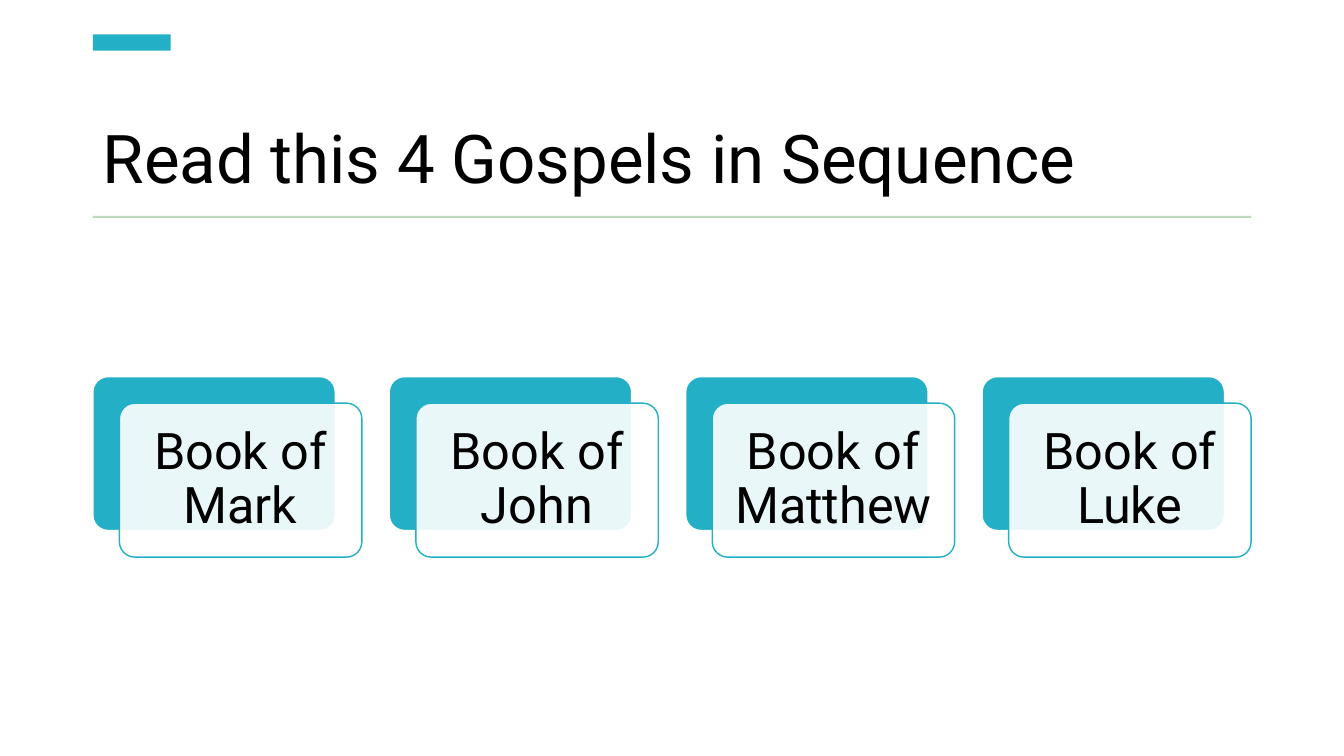
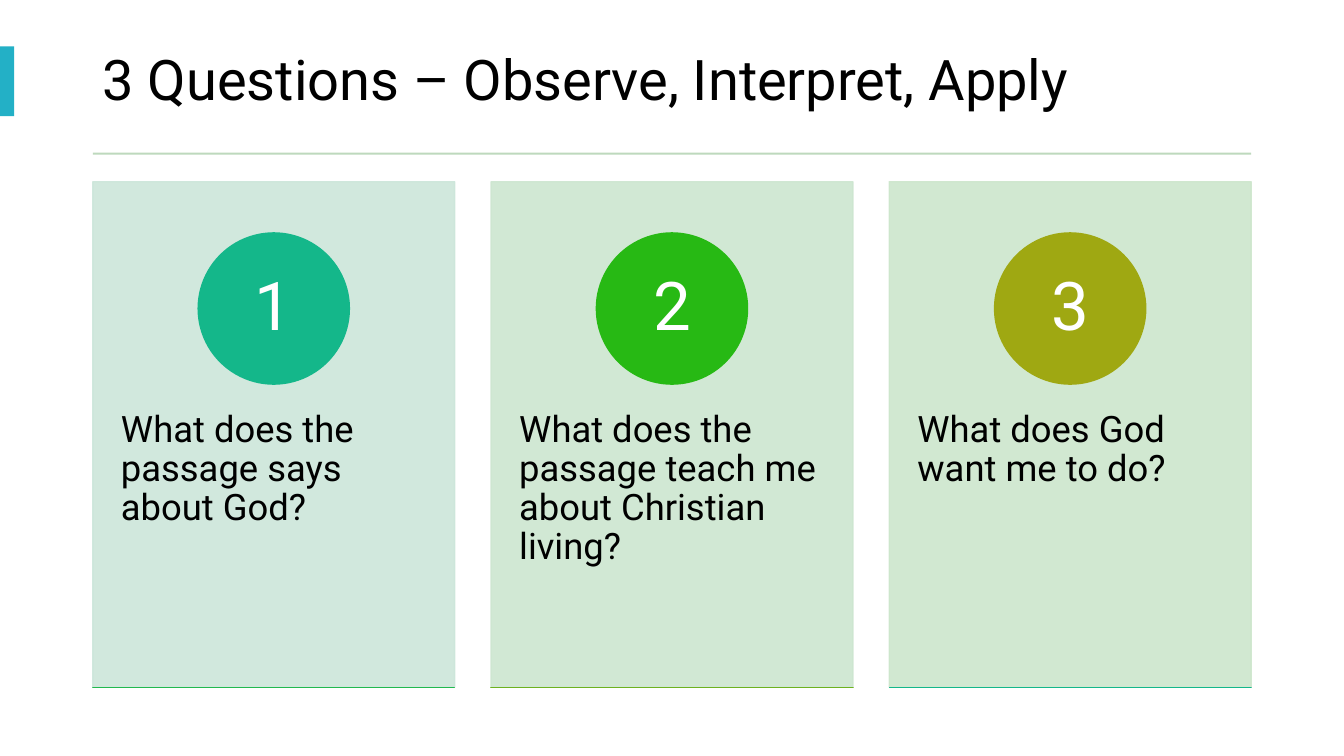
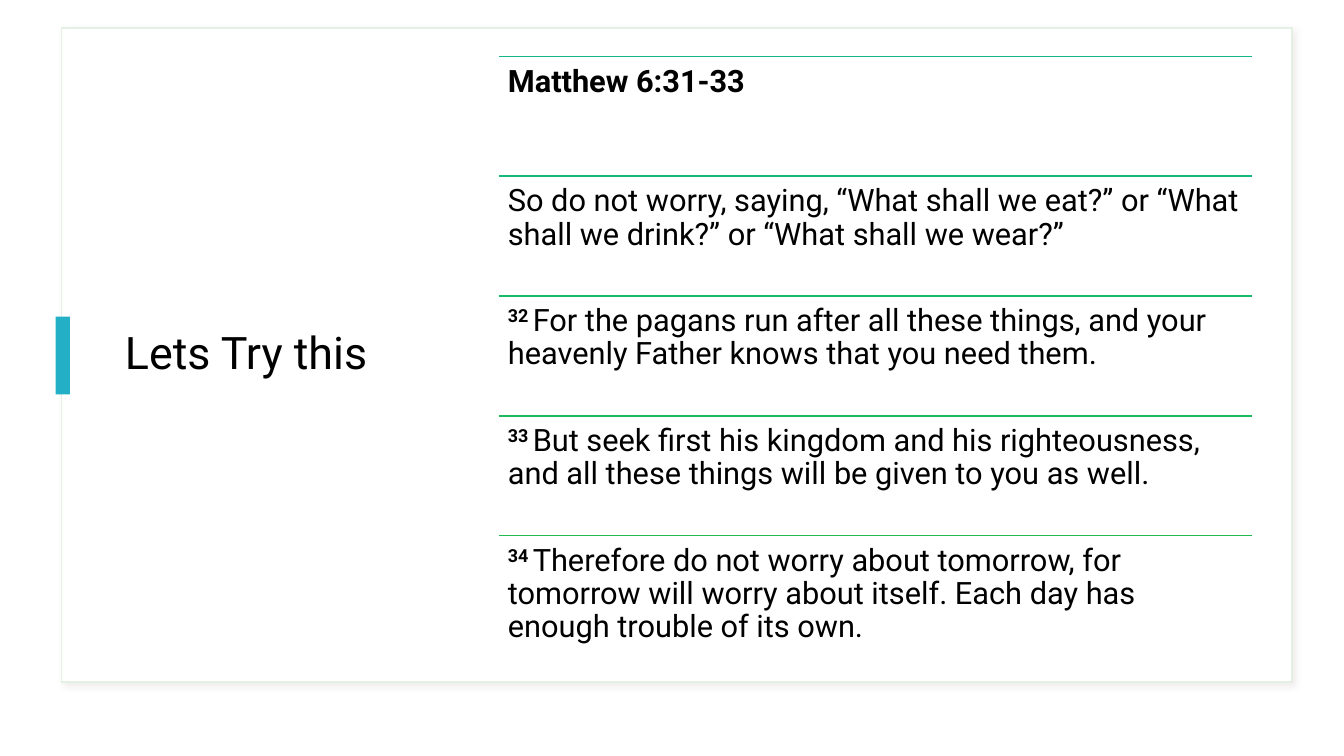
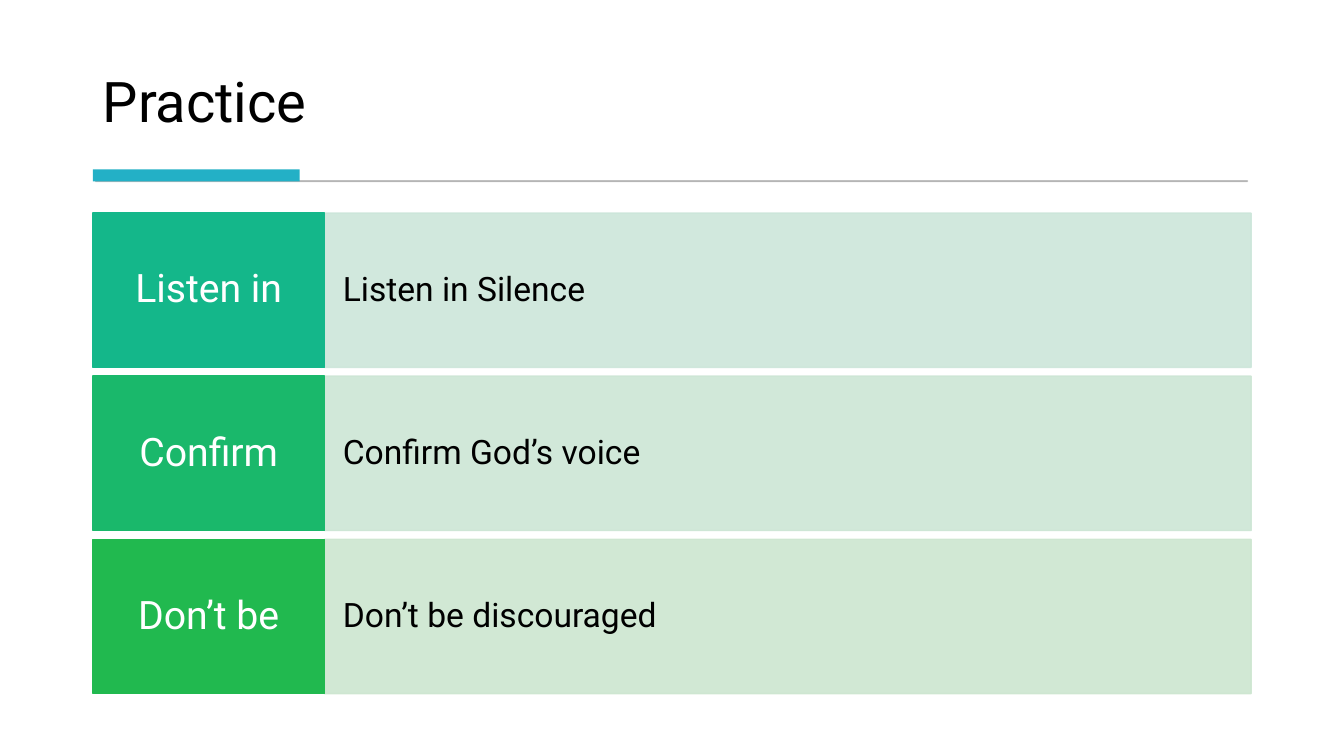
from dataclasses import dataclass
from typing import NamedTuple

from lxml import etree
from pptx import Presentation
from pptx.dml.color import RGBColor
from pptx.enum.shapes import MSO_CONNECTOR, MSO_SHAPE
from pptx.enum.text import MSO_ANCHOR, PP_ALIGN
from pptx.oxml.ns import qn
from pptx.presentation import Presentation as Deck
from pptx.shapes.autoshape import Shape
from pptx.slide import Slide
from pptx.util import Cm, Pt

RECTANGLE = MSO_SHAPE.RECTANGLE
ROUNDED = MSO_SHAPE.ROUNDED_RECTANGLE
OVAL = MSO_SHAPE.OVAL
STRAIGHT = MSO_CONNECTOR.STRAIGHT
TOP, MIDDLE, BOTTOM = MSO_ANCHOR.TOP, MSO_ANCHOR.MIDDLE, MSO_ANCHOR.BOTTOM
LEFT, CENTER = PP_ALIGN.LEFT, PP_ALIGN.CENTER

FONT = "Roboto"
COLORS = {
    "white": "FFFFFF",
    "black": "000000",
    "accent": "23B0C6",
    "rule": "BED9BD",
    "gray": "595959",
    "frame": "E5F0E4",
    "shadow": "CABEBC",
    "teal": "14B78A",
    "sea": "17B87A",
    "jade": "1AB86B",
    "emerald": "1EB95D",
    "green": "21B94F",
    "leaf": "27B914",
    "lime": "6DB220",
    "olive": "9FA812",
    "pale teal": "CCE6DA",
    "pale jade": "CDE6D5",
    "pale green": "CDE6D0",
    "pale leaf": "CDE6CC",
}
MARGIN = 2.34
CONTENT_WIDTH = 29.19


class Area(NamedTuple):
    """Left, top, width and height in centimetres."""

    left: float
    top: float
    width: float
    height: float

    def lengths(self) -> list[Cm]:
        return [Cm(value) for value in self]


class Insets(NamedTuple):
    """Text margins in centimetres."""

    left: float = 0.25
    top: float = 0.13
    right: float = 0.25
    bottom: float = 0.13


class Span(NamedTuple):
    text: str
    bold: bool = False
    raised: bool = False


@dataclass(frozen=True)
class Paint:
    """Colour names, line width in points and opacities in percent."""

    fill: str
    line: str | None = None
    line_width: float = 1
    opacity: int = 100
    line_opacity: int = 100


@dataclass(frozen=True)
class TextStyle:
    size: float
    color: str = "black"
    align: PP_ALIGN = LEFT
    anchor: MSO_ANCHOR = TOP
    insets: Insets = Insets()


@dataclass(frozen=True)
class Question:
    number: str
    text: str
    panel: str
    circle: str
    base: str


@dataclass(frozen=True)
class Verse:
    spans: tuple[Span, ...]
    color: str


@dataclass(frozen=True)
class Step:
    label: str
    text: str
    color: str
    panel: str


BOOKS = ("Book of Mark", "Book of John", "Book of Matthew", "Book of Luke")
QUESTIONS = (
    Question("1", "What does the passage says about God?", "pale teal", "teal", "green"),
    Question(
        "2",
        "What does the passage teach me about Christian living?",
        "pale green",
        "leaf",
        "lime",
    ),
    Question("3", "What does God want me to do?", "pale leaf", "olive", "teal"),
)
VERSES = (
    Verse((Span("Matthew 6:31-33", bold=True),), "teal"),
    Verse(
        (
            Span(
                "So do not worry, saying, “What shall we eat?” or “What shall we "
                "drink?” or “What shall we wear?”"
            ),
        ),
        "sea",
    ),
    Verse(
        (
            Span("32 ", bold=True, raised=True),
            Span(
                "For the pagans run after all these things, and your heavenly Father "
                "knows that you need them."
            ),
        ),
        "jade",
    ),
    Verse(
        (
            Span("33 ", bold=True, raised=True),
            Span(
                "But seek first his kingdom and his righteousness, and all these "
                "things will be given to you as well."
            ),
        ),
        "emerald",
    ),
    Verse(
        (
            Span("34 ", bold=True, raised=True),
            Span(
                "Therefore do not worry about tomorrow, for tomorrow will worry about "
                "itself. Each day has enough trouble of its own."
            ),
        ),
        "green",
    ),
)
STEPS = (
    Step("Listen in", "Listen in Silence", "teal", "pale teal"),
    Step("Confirm", "Confirm God’s voice", "jade", "pale jade"),
    Step("Don’t be", "Don’t be discouraged", "green", "pale green"),
)


def rgb(name: str) -> RGBColor:
    return RGBColor.from_string(COLORS[name])


def set_opacity(color: etree._Element, percent: int) -> None:
    if percent < 100:
        etree.SubElement(color, qn("a:alpha")).set("val", str(percent * 1000))


def add_block(page: Slide, kind: MSO_SHAPE, area: Area, paint: Paint) -> Shape:
    shape = page.shapes.add_shape(kind, *area.lengths())
    shape.shadow.inherit = False
    shape.fill.solid()
    shape.fill.fore_color.rgb = rgb(paint.fill)
    properties = shape.element.spPr
    set_opacity(properties.find(f"{qn('a:solidFill')}/{qn('a:srgbClr')}"), paint.opacity)
    if paint.line is None:
        shape.line.fill.background()
    else:
        shape.line.color.rgb = rgb(paint.line)
        shape.line.width = Pt(paint.line_width)
        outline = properties.find(qn("a:ln"))
        set_opacity(next(outline.iter(qn("a:srgbClr"))), paint.line_opacity)
    return shape


def add_soft_shadow(shape: Shape) -> None:
    effects = shape.element.spPr.find(qn("a:effectLst"))
    shadow = etree.SubElement(effects, qn("a:outerShdw"))
    shadow.set("blurRad", str(Pt(4)))
    shadow.set("dist", str(Pt(3)))
    shadow.set("dir", str(45 * 60000))
    color = etree.SubElement(shadow, qn("a:srgbClr"))
    color.set("val", COLORS["shadow"])
    set_opacity(color, 30)


def write(shape: Shape, spans: tuple[Span, ...], style: TextStyle) -> None:
    frame = shape.text_frame
    frame.word_wrap = True
    frame.vertical_anchor = style.anchor
    frame.margin_left, frame.margin_top, frame.margin_right, frame.margin_bottom = (
        Cm(value) for value in style.insets
    )
    para = frame.paragraphs[0]
    para.alignment = style.align
    para.line_spacing = 0.9
    for span in spans:
        run = para.add_run()
        run.text = span.text
        run.font.name = FONT
        run.font.size = Pt(style.size)
        run.font.bold = span.bold
        run.font.color.rgb = rgb(style.color)
        if span.raised:
            run.font._element.set("baseline", "30000")


def add_text(page: Slide, area: Area, spans: tuple[Span, ...], style: TextStyle) -> None:
    write(page.shapes.add_textbox(*area.lengths()), spans, style)


def add_title(
    page: Slide, text: str, area: Area, size: float, anchor: MSO_ANCHOR = MIDDLE
) -> None:
    add_text(page, area, (Span(text),), TextStyle(size, anchor=anchor))


def add_accent(page: Slide, area: Area) -> None:
    add_block(page, RECTANGLE, area, Paint("accent"))


def add_title_rule(page: Slide, top: float) -> None:
    add_block(page, RECTANGLE, Area(MARGIN, top, CONTENT_WIDTH, 0.05), Paint("rule"))


def add_line(page: Slide, left: float, top: float, width: float, color: str) -> None:
    line = page.shapes.add_connector(
        STRAIGHT, Cm(left), Cm(top), Cm(left + width), Cm(top)
    )
    line.line.color.rgb = rgb(color)
    line.line.width = Pt(1)
    etree.SubElement(line.element.spPr, qn("a:effectLst"))


def pale(color: str) -> Paint:
    return Paint(color, color, opacity=90, line_opacity=90)


def build_gospels(page: Slide) -> None:
    add_title(
        page,
        "Read this 4 Gospels in Sequence",
        Area(MARGIN, 1.9, CONTENT_WIDTH, 3.23),
        48,
        BOTTOM,
    )
    add_accent(page, Area(MARGIN, 0.87, 1.96, 0.41))
    add_title_rule(page, 5.44)

    width, height, offset = 6.11, 3.88, 0.67
    pitch = (CONTENT_WIDTH - width - offset) / (len(BOOKS) - 1)
    style = TextStyle(
        36, align=CENTER, anchor=MIDDLE, insets=Insets(0.38, 0.38, 0.38, 0.38)
    )
    layers = (
        (0, Paint("accent", "white")),
        (offset, Paint("white", "accent", opacity=90)),
    )
    for index, book in enumerate(BOOKS):
        for shift, paint in layers:
            area = Area(MARGIN + index * pitch + shift, 9.49 + shift, width, height)
            card = add_block(page, ROUNDED, area, paint)
            card.adjustments[0] = 0.1
        write(card, (Span(book),), style)


def build_questions(page: Slide) -> None:
    add_title(
        page,
        "3 Questions – Observe, Interpret, Apply",
        Area(MARGIN, 0.69, CONTENT_WIDTH, 2.79),
        40,
    )
    add_accent(page, Area(0, 1.17, 0.36, 1.76))
    add_title_rule(page, 3.85)

    width, height, top, diameter = 9.12, 12.74, 4.58, 3.81
    pitch = (CONTENT_WIDTH - width) / (len(QUESTIONS) - 1)
    question_style = TextStyle(26, insets=Insets(0.71, 5.77, 0.71, 0.91))
    number_style = TextStyle(48, "white", CENTER, MIDDLE, Insets(0.3, 0.03, 0.3, 0.03))
    for index, question in enumerate(QUESTIONS):
        left = MARGIN + index * pitch
        panel = add_block(
            page, RECTANGLE, Area(left, top, width, height), pale(question.panel)
        )
        write(panel, (Span(question.text),), question_style)
        circle = add_block(
            page,
            OVAL,
            Area(left + (width - diameter) / 2, top + 1.29, diameter, diameter),
            Paint(question.circle, question.circle),
        )
        write(circle, (Span(question.number),), number_style)
        add_block(
            page,
            RECTANGLE,
            Area(left, top + height, width, 0),
            Paint(question.base, question.base),
        )


def build_passage(page: Slide) -> None:
    frame = add_block(
        page, RECTANGLE, Area(1.55, 0.71, 31.01, 16.48), Paint("white", "frame")
    )
    add_soft_shadow(frame)
    add_title(page, "Lets Try this", Area(2.9, 1.4, 8.31, 15.11), 32)
    add_accent(page, Area(1.4, 7.98, 0.36, 1.96))

    left, width, pitch = 12.57, 18.97, 3.02
    style = TextStyle(22, insets=Insets(0.23, 0.23, 0.23, 0.23))
    for index, verse in enumerate(VERSES):
        top = 1.42 + index * pitch
        add_line(page, left, top, width, verse.color)
        add_text(page, Area(left, top, width, pitch), verse.spans, style)


def build_practice(page: Slide) -> None:
    add_title(page, "Practice", Area(MARGIN, 0.71, CONTENT_WIDTH, 2.82), 40, BOTTOM)
    add_block(
        page,
        RECTANGLE,
        Area(2.41, 4.55, 29.03, 0.03),
        Paint("gray", "gray", 0.75, opacity=30, line_opacity=30),
    )
    add_accent(page, Area(MARGIN, 4.27, 5.21, 0.3))

    label_width, height, pitch = 5.84, 3.89, 4.11
    label_style = TextStyle(28, "white", CENTER, MIDDLE, Insets(0.3, 0.38, 0.3, 0.38))
    text_style = TextStyle(24, anchor=MIDDLE, insets=Insets(0.46, 0.99, 0.46, 0.99))
    for index, step in enumerate(STEPS):
        top = 5.37 + index * pitch
        text_area = Area(
            MARGIN + label_width, top, CONTENT_WIDTH - label_width, height
        )
        panel = add_block(page, RECTANGLE, text_area, pale(step.panel))
        write(panel, (Span(step.text),), text_style)
        label = add_block(
            page,
            RECTANGLE,
            Area(MARGIN, top, label_width, height),
            Paint(step.color, step.color),
        )
        write(label, (Span(step.label),), label_style)


def main() -> None:
    deck: Deck = Presentation()
    deck.slide_width, deck.slide_height = Cm(33.87), Cm(19.05)
    blank = deck.slide_layouts[6]
    for build in (build_gospels, build_questions, build_passage, build_practice):
        build(deck.slides.add_slide(blank))
    deck.save("out.pptx")


if __name__ == "__main__":
    main()
